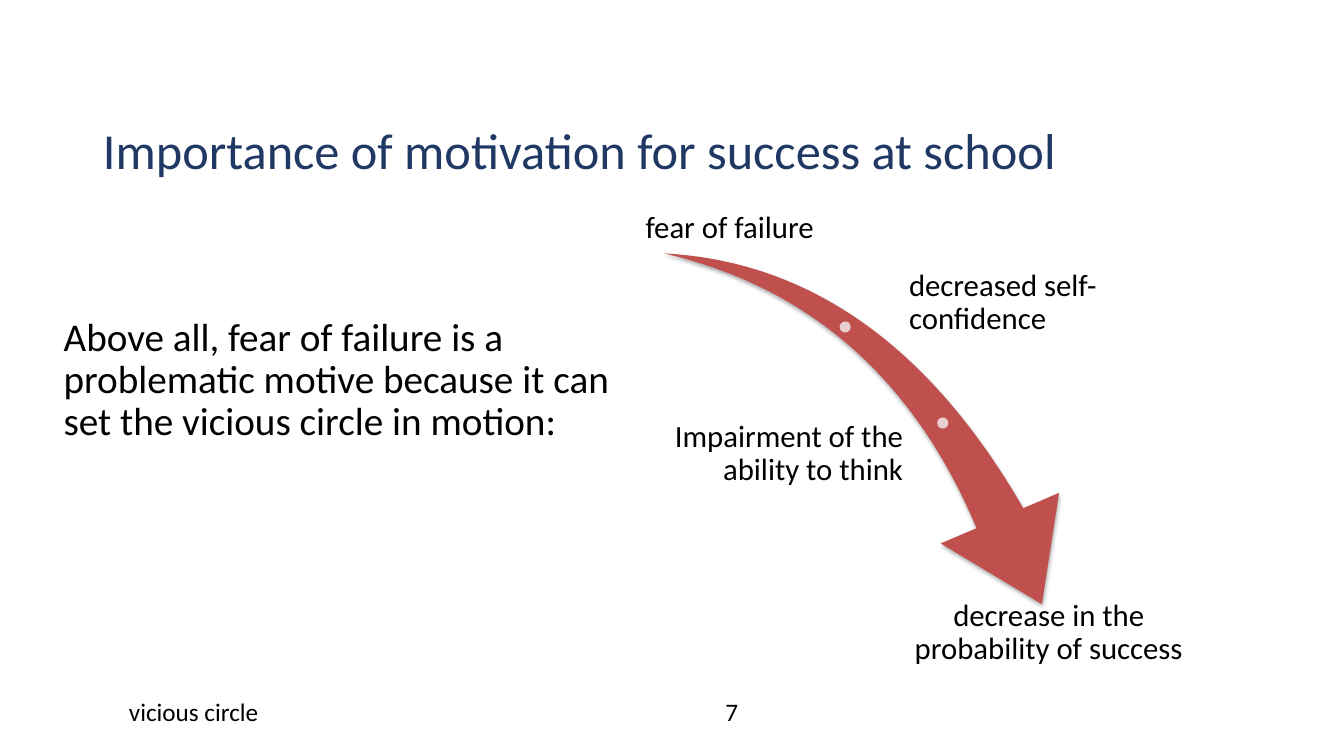
from lxml.etree import SubElement as Sub
from pptx import Presentation
from pptx.dml.color import RGBColor
from pptx.enum.shapes import MSO_SHAPE as Shape
from pptx.enum.text import MSO_ANCHOR as Anchor, MSO_AUTO_SIZE as Fit, PP_ALIGN as Align
from pptx.oxml.ns import qn
from pptx.util import Cm, Pt

NAVY = RGBColor(0x20, 0x38, 0x64)
BLACK = RGBColor(0x00, 0x00, 0x00)
RED = RGBColor(0xC0, 0x50, 0x4D)
PINK = RGBColor(0xE8, 0xD0, 0xD0)

LABELS = [
    ("fear of failure", (15.75, 4.17, 5.28, 2.08), Align.CENTER, Anchor.BOTTOM),
    ("decreased self-confidence", (22.83, 6.6, 7.26, 2.08), Align.LEFT, Anchor.MIDDLE),
    ("Impairment of the ability to think", (15.7, 10.41, 7.14, 2.08), Align.RIGHT, Anchor.MIDDLE),
    ("decrease in the probability of success", (22.86, 15.04, 7.14, 2.08), Align.CENTER, Anchor.TOP),
]
DOTS = [(21.16, 8.1), (23.62, 10.52)]
DOT = 0.28


def write(shape, text, size, color=BLACK, align=Align.LEFT, anchor=Anchor.TOP, lead=0.9):
    frame = shape.text_frame
    frame.text = text
    frame.word_wrap = True
    frame.auto_size = Fit.NONE
    frame.vertical_anchor = anchor
    para = frame.paragraphs[0]
    para.alignment = align
    para.line_spacing = lead
    para.space_before = Pt(0)
    font = para.runs[0].font
    font.name = "Calibri"
    font.size = Pt(size)
    font.color.rgb = color
    return frame


def place(shape, box):
    shape.left, shape.top, shape.width, shape.height = map(Cm, box)


def add_text(slide, text, box, size, **style):
    return write(slide.shapes.add_textbox(*map(Cm, box)), text, size, **style)


def add_label(slide, text, box, align, anchor):
    frame = add_text(slide, text, box, 22, align=align, anchor=anchor)
    frame.margin_left = frame.margin_right = Cm(0.08)
    frame.margin_top = frame.margin_bottom = Cm(0.08)


def add_solid(slide, kind, box, color):
    shape = slide.shapes.add_shape(kind, *map(Cm, box))
    shape.shadow.inherit = False
    shape.fill.solid()
    shape.fill.fore_color.rgb = color
    shape.line.fill.background()
    return shape


def add_swoosh(slide):
    arrow = add_solid(slide, Shape.SWOOSH_ARROW, (16.48, 6.73, 11.2, 7.8), RED)
    arrow.rotation = 73.3
    arrow.adjustments[0] = 0.163
    arrow.adjustments[1] = 0.314
    effects = arrow.element.spPr.find(qn("a:effectLst"))
    shade = Sub(effects, qn("a:outerShdw"), blurRad=str(Pt(3.1)), dist=str(Pt(1.8)),
                dir="5400000", rotWithShape="0")
    tint = Sub(shade, qn("a:srgbClr"), val="000000")
    Sub(tint, qn("a:alpha"), val="35000")


def drop_bullet(para):
    props = para._p.get_or_add_pPr()
    props.set("marL", "0")
    props.set("indent", "0")
    Sub(props, qn("a:buNone"))


def main():
    deck = Presentation()
    deck.slide_width, deck.slide_height = Cm(33.87), Cm(19.05)
    slide = deck.slides.add_slide(deck.slide_layouts[1])

    title, body = slide.shapes.title, slide.placeholders[1]
    place(title, (2.34, 3.05, 29.21, 2.46))
    write(title, "Importance of motivation for success at school", 36, NAVY)
    place(body, (1.35, 7.87, 14.73, 5.23))
    frame = write(body, "Above all, fear of failure is a problematic motive because "
                  "it can set the vicious circle in motion:", 28)
    drop_bullet(frame.paragraphs[0])

    add_text(slide, "vicious circle", (3, 17.42, 11.43, 1.02), 18, lead=1.0)
    add_text(slide, "7", (14.63, 17.42, 7.62, 1.02), 18, align=Align.CENTER, lead=1.0)

    add_swoosh(slide)
    for left, top in DOTS:
        add_solid(slide, Shape.OVAL, (left, top, DOT, DOT), PINK)
    for label in LABELS:
        add_label(slide, *label)
    deck.save("out.pptx")


if __name__ == "__main__":
    main()
